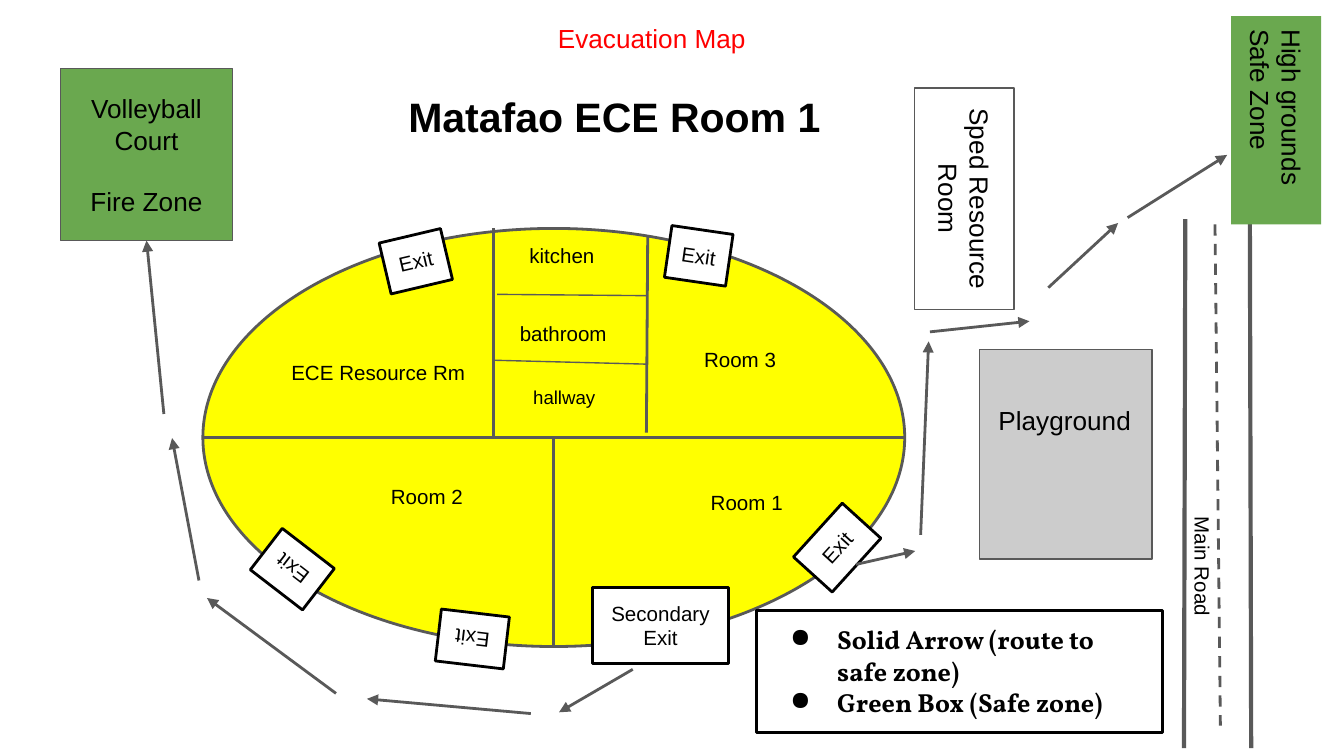
from lxml import etree
from pptx import Presentation
from pptx.dml.color import RGBColor
from pptx.enum.dml import MSO_LINE
from pptx.enum.shapes import MSO_CONNECTOR, MSO_SHAPE
from pptx.enum.text import MSO_ANCHOR, PP_ALIGN
from pptx.oxml.ns import qn
from pptx.util import Pt

BLACK = RGBColor(0, 0, 0)
WHITE = RGBColor(0xFF, 0xFF, 0xFF)
RED = RGBColor(0xFF, 0, 0)
YELLOW = RGBColor(0xFF, 0xFF, 0)
GREEN = RGBColor(0x6A, 0xA8, 0x4F)
SILVER = RGBColor(0xCC, 0xCC, 0xCC)
GRAY = RGBColor(0x59, 0x59, 0x59)
LEFT, CENTER = PP_ALIGN.LEFT, PP_ALIGN.CENTER
TOP, MIDDLE = MSO_ANCHOR.TOP, MSO_ANCHOR.MIDDLE
RECT, OVAL = MSO_SHAPE.RECTANGLE, MSO_SHAPE.OVAL
STRAIGHT = MSO_CONNECTOR.STRAIGHT
DASH = MSO_LINE.DASH
PAD = 7.2


def write(shape, lines, size, color=BLACK, bold=False, align=LEFT, anchor=TOP, font="Arial"):
    """Fill a shape with one paragraph per line and return its frame."""
    frame = shape.text_frame
    frame.word_wrap = True
    frame.vertical_anchor = anchor
    frame.margin_left = frame.margin_right = Pt(PAD)
    frame.margin_top = frame.margin_bottom = Pt(PAD)
    frame.text = "\n".join(lines)
    for para in frame.paragraphs:
        para.alignment = align
        para.font.name = font
        para.font.size = Pt(size)
        para.font.bold = bold
        para.font.color.rgb = color
    return frame


def label(slide, x, y, w, h, text, size=11, **style):
    """Place a text box and return its frame."""
    box = slide.shapes.add_textbox(Pt(x), Pt(y), Pt(w), Pt(h))
    return write(box, [text], size, **style)


def block(slide, x, y, w, h, fill=None, edge=GRAY, width=0.75, kind=RECT, turn=0):
    """Place a flat shape, filled and outlined where colours are given."""
    shape = slide.shapes.add_shape(kind, Pt(x), Pt(y), Pt(w), Pt(h))
    shape.shadow.inherit = False
    shape.rotation = turn
    for part, color in ((shape.fill, fill), (shape.line.fill, edge)):
        if color is None:
            part.background()
        else:
            part.solid()
            part.fore_color.rgb = color
    if edge is not None:
        shape.line.width = Pt(width)
    return shape


def line(slide, x, y, start, end, width=1.5, dash=None, arrow=False):
    """Draw a straight connector between points relative to x, y."""
    link = slide.shapes.add_connector(
        STRAIGHT, Pt(x + start[0]), Pt(y + start[1]), Pt(x + end[0]), Pt(y + end[1]))
    link.line.color.rgb = GRAY
    link.line.width = Pt(width)
    if dash:
        link.line.dash_style = dash
    if arrow:
        etree.SubElement(link.line._get_or_add_ln(), qn("a:tailEnd"), type="triangle")
    etree.SubElement(link._element.spPr, qn("a:effectLst"))
    return link


def titles(slide, x, y, w):
    """Write the red map title and the room heading."""
    frame = label(slide, x, y, w, 33, "Evacuation Map", 14, color=RED, align=CENTER)
    frame.margin_top = Pt(PAD / 2)
    label(slide, x + 36, y + 33.2, 249, 58, "Matafao ECE Room 1", 22, bold=True)


def school(slide, x, y, w, h):
    """Draw the oval building with its walls, rooms and exits."""
    block(slide, x, y, w, h, YELLOW, width=1.5, kind=OVAL)
    walls = (
        ((w / 2, h / 2), (w / 2, h), 1.5),
        ((0, h / 2), (w, h / 2), 1.5),
        ((155.5, 0), (155.5, h / 2), 1.5),
        ((238.3, 4.3), (237.6, 109.4), 1.5),
        ((157.7, 35.3), (238.3, 36), 0.75),
        ((155.5, 70.6), (237.6, 72.7), 0.75),
    )
    for start, end, width in walls:
        line(slide, x, y, start, end, width)
    rooms = (
        ("ECE Resource Rm", 40.3, 64.1, 144, 28, 11),
        ("Room 1", 265, 133.2, 144, 44.6, 11),
        ("Room 2", 93.6, 130.3, 144, 28, 11),
        ("Room 3", 261.4, 56.9, 144, 28, 11),
        ("kitchen", 167.8, 1.4, 67.7, 28, 11),
        ("bathroom", 162.7, 43.2, 67.7, 28, 11),
        ("hallway", 169.9, 78.5, 52.6, 26.6, 10),
    )
    for name, left, top, width, height, size in rooms:
        label(slide, x + left, y + top, width, height, name, size)
    exits = (
        (249.1, 0.7, 33.1, 8.3),
        (126, 205.9, 36.7, 186.7),
        (30.3, 168.5, 35.3, 217.6),
        (320.4, 157, 38.9, 312.2),
        (97.2, 3.6, 33.8, 346.7),
    )
    for left, top, width, turn in exits:
        door = block(slide, x + left, y + top, width, 28, WHITE, BLACK, 1.5, turn=turn)
        write(door, ["Exit"], 11, align=CENTER).word_wrap = False
    door = block(slide, x + 208.8, y + 192.2, 72.7, 41, WHITE, BLACK, 1.5)
    write(door, ["Secondary Exit"], 11, align=CENTER)


def road(slide, x, y, h):
    """Draw the main road with its edges, centre line and name."""
    line(slide, x, y, (0.7, 0), (0, h), 2.25)
    line(slide, x, y, (35.3, 0), (36, h), 2.25)
    line(slide, x, y, (16.6, 2.8), (19.5, 271.4), dash=DASH)
    frame = label(slide, x - 50.4, y + 198, 119.5, 28, "Main Road")
    slide.shapes[-1].rotation = 90
    return frame


def yard(slide, x, y, w, h):
    """Draw the playground and its name."""
    block(slide, x, y, w, h, SILVER)
    label(slide, x + 2.9, y + 22.3, w - 6.5, 31.7, "Playground", 14)


def court(slide, x, y, w, h):
    """Draw the fire zone at the volleyball court."""
    zone = block(slide, x, y, w, h, GREEN)
    frame = write(zone, ["Volleyball", "Court", "Fire Zone"], 14, align=CENTER, anchor=MIDDLE)
    frame.paragraphs[-1].space_before = Pt(16)
    return zone


def hill(slide, x, y, w, h):
    """Draw the turned safe zone on high grounds."""
    zone = block(slide, x, y, w, h, GREEN, None, turn=90)
    write(zone, ["High grounds", "Safe Zone"], 14)


def sped(slide, x, y, w, h):
    """Draw the turned resource room."""
    room = block(slide, x, y, w, h, turn=90)
    write(room, ["Sped Resource Room"], 14, align=CENTER, anchor=MIDDLE)


def route(slide, x, y, legs):
    """Draw the arrows of a route and return the last one."""
    return [line(slide, x, y, start, end, arrow=True) for start, end in legs][-1]


def legend(slide, x, y, w, h):
    """Draw the bulleted key to the map."""
    key = block(slide, x, y, w, h, None, BLACK, 1.5)
    lines = ["Solid Arrow (route to safe zone)", "Green Box (Safe zone)"]
    frame = write(key, lines, 14, bold=True, font="Vollkorn")
    for para in frame.paragraphs:
        props = para._p.get_or_add_pPr()
        props.set("marL", str(Pt(36)))
        props.set("indent", str(Pt(-25.2)))
        bullet = etree.Element(qn("a:buChar"), char="●")
        props.insert_element_before(bullet, "a:tabLst", "a:defRPr", "a:extLst")


EAST = (
    ((0.6, 219.4), (32.3, 212.2)),
    ((35.2, 203.6), (39.5, 99.9)),
    ((40.2, 94.8), (93.5, 89.1)),
    ((103.6, 71.1), (141, 36.5)),
    ((146.1, 33.6), (199.4, 0)),
)
WEST = (
    ((261, 229.6), (221.5, 252.6)),
    ((206.4, 253.3), (118.6, 245.4)),
    ((102, 242.5), (32.9, 191.4)),
    ((28.6, 182), (14.2, 105.7)),
    ((9.8, 92.8), (0.5, 0)),
)


def main():
    """Build and save the evacuation map."""
    deck = Presentation()
    deck.slide_width, deck.slide_height = Pt(720), Pt(405)
    slide = deck.slides.add_slide(deck.slide_layouts[6])
    titles(slide, 175.7, 8.6, 347)
    school(slide, 108.7, 122.4, 376, 224)
    road(slide, 634.3, 117.4, 283.4)
    yard(slide, 524.9, 187.2, 92.2, 112.3)
    hill(slide, 627.8, 40.3, 111.6, 48.2)
    sped(slide, 457.2, 79.9, 118.8, 53.3)
    zone = court(slide, 32.4, 36.7, 92.2, 92.2)
    route(slide, 458, 83, EAST)
    route(slide, 78, 129, WEST).end_connect(zone, 2)
    legend(slide, 405.4, 326.9, 217.4, 65.5)
    deck.save("out.pptx")


if __name__ == "__main__":
    main()
